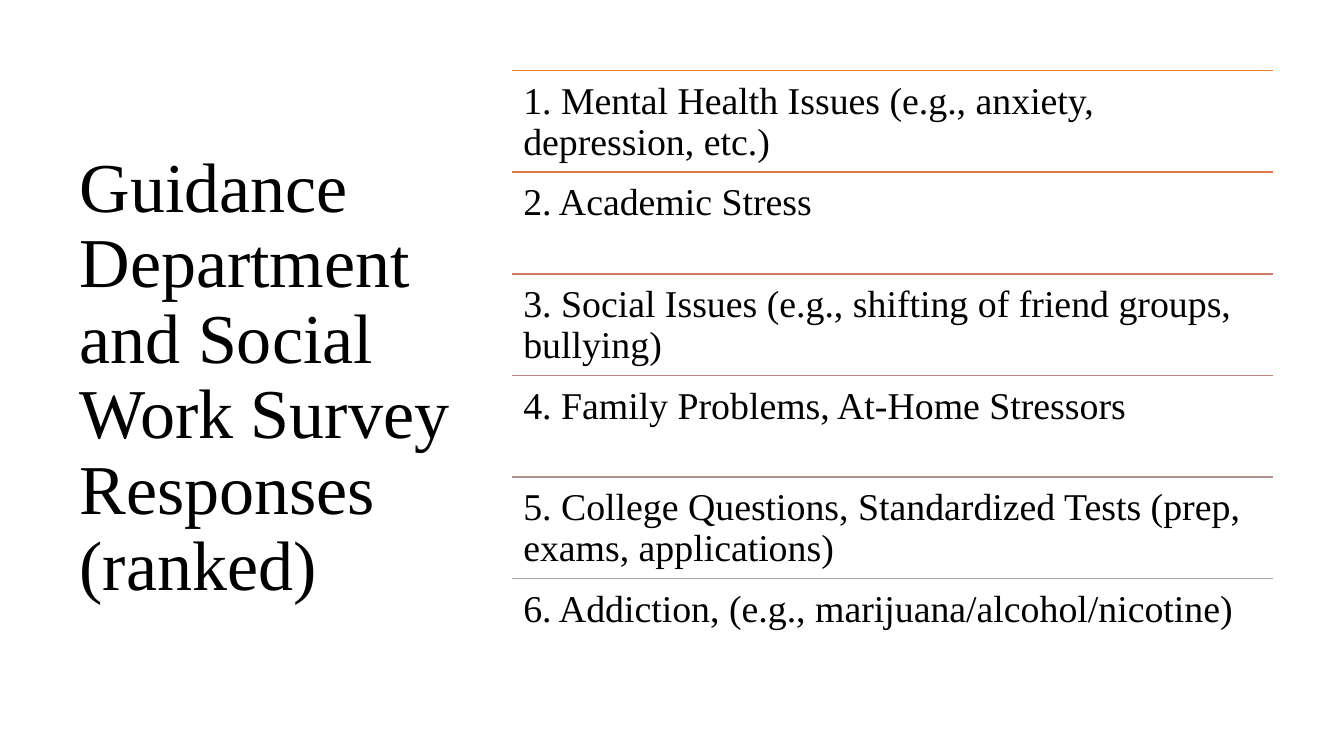
import pptx
import pptx.util
import pptx.dml.color
import pptx.enum.shapes
import pptx.enum.text
from lxml import etree

Inches = pptx.util.Inches
RGBColor = pptx.dml.color.RGBColor
Anchor = pptx.enum.text.MSO_ANCHOR

FONT = "Times New Roman"
BLACK = RGBColor(0x00, 0x00, 0x00)

# Each response with the colour of the rule above it, in ranked order
RESPONSES = [
    ("1. Mental Health Issues (e.g., anxiety, depression, etc.)", RGBColor(0xED, 0x7D, 0x31)),
    ("2. Academic Stress", RGBColor(0xDC, 0x7A, 0x4B)),
    ("3. Social Issues (e.g., shifting of friend groups, bullying)", RGBColor(0xCC, 0x7D, 0x64)),
    ("4. Family Problems, At-Home Stressors", RGBColor(0xBD, 0x86, 0x7B)),
    ("5. College Questions, Standardized Tests (prep, exams, applications)", RGBColor(0xB0, 0x93, 0x91)),
    ("6. Addiction, (e.g., marijuana/alcohol/nicotine)", RGBColor(0xA5, 0xA5, 0xA5)),
]

# Grid: title column on the left, equal response rows on the right
TOP = Inches(0.7)
TITLE_LEFT = Inches(0.69)
LIST_LEFT = Inches(5.08)
LIST_WIDTH = Inches(7.55)
ROW_HEIGHT = Inches(6.05) // len(RESPONSES)

presentation = pptx.Presentation()
presentation.slide_width = Inches(13.33)
presentation.slide_height = Inches(7.5)
slide = presentation.slides.add_slide(presentation.slide_layouts[6])


def add_text(text, left, top, width, height, size, anchor, inset_x, inset_y):
    frame = slide.shapes.add_textbox(left, top, width, height).text_frame
    frame.word_wrap = True
    frame.vertical_anchor = anchor
    frame.margin_left = frame.margin_right = Inches(inset_x)
    frame.margin_top = frame.margin_bottom = Inches(inset_y)
    paragraph = frame.paragraphs[0]
    paragraph.text = text
    paragraph.line_spacing = 0.9
    paragraph.font.name = FONT
    paragraph.font.size = pptx.util.Pt(size)
    paragraph.font.color.rgb = BLACK


# Title
add_text("Guidance Department and Social Work Survey Responses (ranked)",
         TITLE_LEFT, TOP, LIST_LEFT - TITLE_LEFT, Inches(6.11), 50, Anchor.MIDDLE, 0.1, 0.05)

# Ranked responses, each under its own rule
for row, (response, rule_color) in enumerate(RESPONSES):
    row_top = TOP + row * ROW_HEIGHT
    rule = slide.shapes.add_connector(pptx.enum.shapes.MSO_CONNECTOR.STRAIGHT,
                                      LIST_LEFT, row_top, LIST_LEFT + LIST_WIDTH, row_top)
    rule.line.color.rgb = rule_color
    rule.line.width = pptx.util.Pt(1)
    etree.SubElement(rule.element.spPr, pptx.oxml.ns.qn("a:effectLst"))
    add_text(response, LIST_LEFT, row_top, LIST_WIDTH, ROW_HEIGHT, 27, Anchor.TOP, 0.11, 0.11)

presentation.save("out.pptx")
